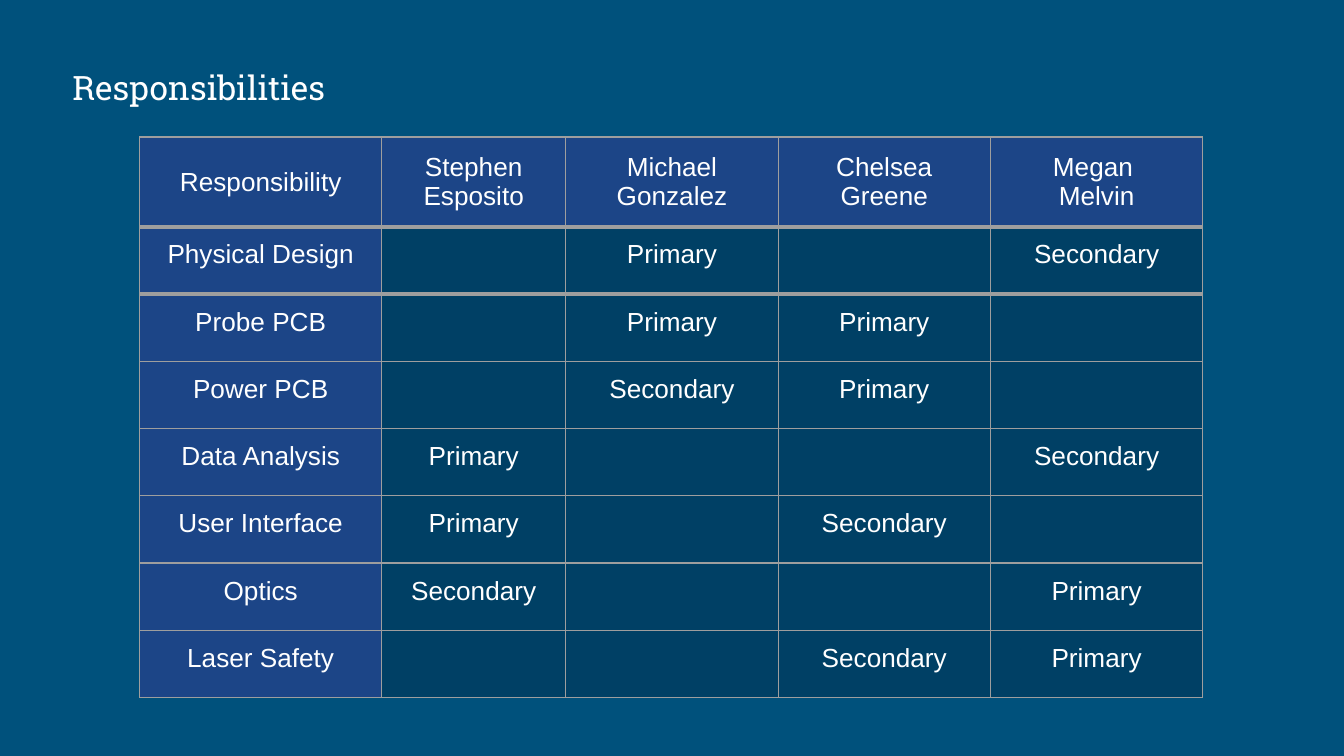
from lxml import etree
from pptx import Presentation
from pptx import util as u
from pptx.dml.color import RGBColor
from pptx.enum import text
from pptx.oxml.ns import qn

COLORS = {
    "background": "00517C",
    "heading": "1C4587",
    "body": "004065",
    "border": "9E9E9E",
    "text": "FFFFFF",
}
SLIDE_W, SLIDE_H = 10, 5.625
COLUMN_WIDTHS = [1.8, 1.37] + [1.58] * 3
HEADER_H, ROW_H = 0.63, 0.48
INSET = 0.1
THIN, THICK = 0.75, 2.25

MEMBERS = [["Stephen Esposito"], ["Michael Gonzalez"], ["Chelsea Greene"],
           ["Megan ", "Melvin"]]
# Each area lists the role of every member, in the order of MEMBERS
P, S = "Primary", "Secondary"
AREAS = {
    "Physical Design": ["", P, "", S],
    "Probe PCB": ["", P, P, ""],
    "Power PCB": ["", S, P, ""],
    "Data Analysis": [P, "", "", S],
    "User Interface": [P, "", S, ""],
    "Optics": [S, "", "", P],
    "Laser Safety": ["", "", S, P],
}


def color(name):
    return RGBColor.from_string(COLORS[name])


def add_run(paragraph, words, font, size):
    run = paragraph.add_run()
    run.text = words
    run.font.name = font
    run.font.size = u.Pt(size)
    run.font.color.rgb = color("text")


def set_insets(holder):
    for side in ("left", "right", "top", "bottom"):
        setattr(holder, f"margin_{side}", u.Inches(INSET))


def set_borders(cell, top, bottom):
    properties = cell._tc.get_or_add_tcPr()
    widths = {"a:lnL": THIN, "a:lnR": THIN, "a:lnT": top, "a:lnB": bottom}
    for position, (tag, width) in enumerate(widths.items()):
        line = etree.Element(qn(tag), w=str(u.Pt(width)))
        fill = etree.SubElement(line, qn("a:solidFill"))
        etree.SubElement(fill, qn("a:srgbClr"), val=COLORS["border"])
        properties.insert(position, line)


def add_title(slide, words):
    title = slide.shapes.add_textbox(u.Inches(0.44), u.Inches(0.32),
                                     u.Inches(6.56), u.Inches(0.65))
    frame = title.text_frame
    frame.word_wrap = True
    frame.vertical_anchor = text.MSO_ANCHOR.MIDDLE
    set_insets(frame)
    add_run(frame.paragraphs[0], words, "Roboto Slab", 18)


def fill_cell(cell, lines, fill):
    cell.fill.solid()
    cell.fill.fore_color.rgb = color(fill)
    set_insets(cell)
    frame = cell.text_frame
    for index, words in enumerate(lines):
        paragraph = frame.add_paragraph() if index else frame.paragraphs[0]
        paragraph.alignment = text.PP_ALIGN.CENTER
        if words:
            add_run(paragraph, words, "Arial", 14)


def add_responsibility_table(slide):
    rows = [[["Responsibility"]] + MEMBERS]
    rows += [[[area]] + [[role] for role in roles] for area, roles in AREAS.items()]
    heights = [HEADER_H] + [ROW_H] * len(AREAS)
    table = slide.shapes.add_table(
        len(rows), len(COLUMN_WIDTHS), u.Inches(1.04), u.Inches(1.02),
        u.Inches(sum(COLUMN_WIDTHS)), u.Inches(sum(heights))).table
    table.horz_banding = False

    for column, width in zip(table.columns, COLUMN_WIDTHS):
        column.width = u.Inches(width)
    for r, (row, height) in enumerate(zip(rows, heights)):
        table.rows[r].height = u.Inches(height)
        for c, lines in enumerate(row):
            cell = table.cell(r, c)
            fill_cell(cell, lines, "heading" if r == 0 or c == 0 else "body")
            if r == 0:
                cell.vertical_anchor = text.MSO_ANCHOR.MIDDLE
            # Thick rules enclose the first area
            set_borders(cell, top=THICK if r in (1, 2) else THIN,
                        bottom=THICK if r in (0, 1) else THIN)


def main():
    deck = Presentation()
    deck.slide_width, deck.slide_height = u.Inches(SLIDE_W), u.Inches(SLIDE_H)
    slide = deck.slides.add_slide(deck.slide_layouts[6])
    slide.background.fill.solid()
    slide.background.fill.fore_color.rgb = color("background")
    add_title(slide, "Responsibilities")
    add_responsibility_table(slide)
    deck.save("out.pptx")


if __name__ == "__main__":
    main()
